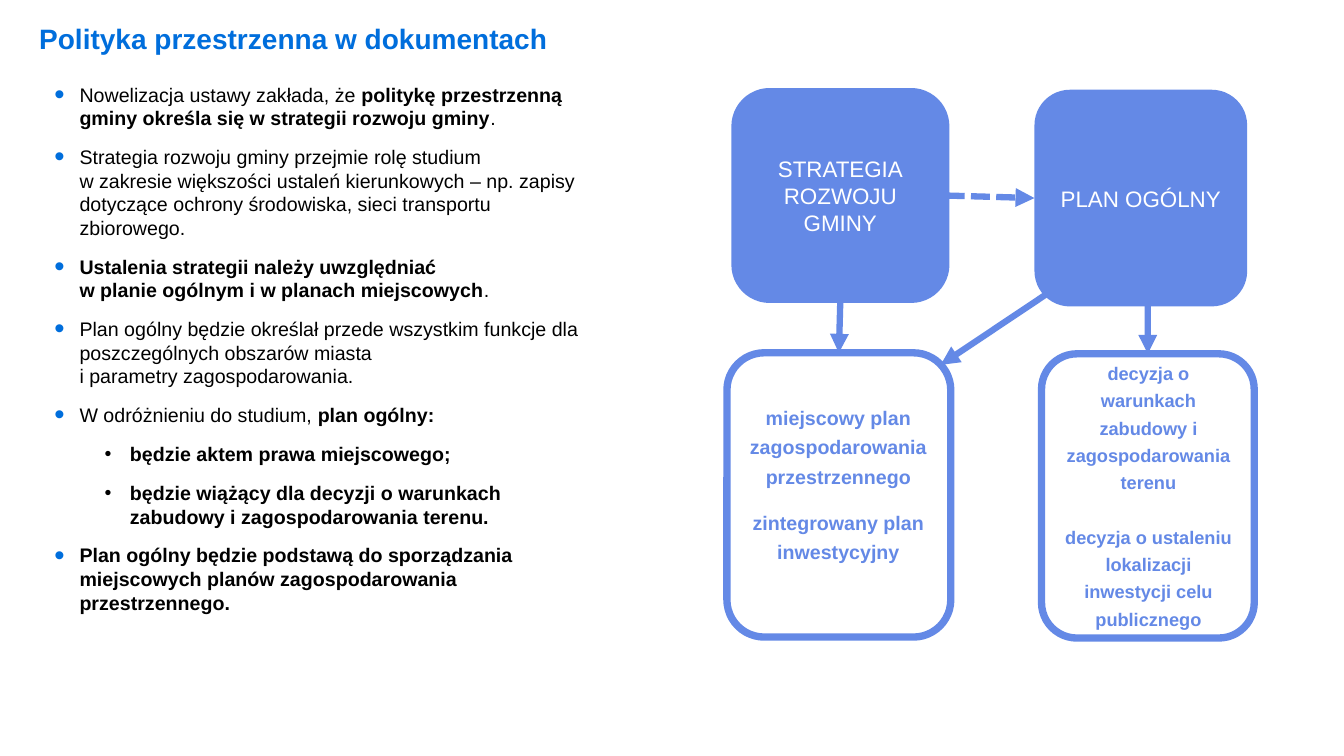
from typing import NamedTuple, Optional

from lxml.etree import SubElement
from pptx import Presentation
from pptx.dml.color import RGBColor
from pptx.enum.dml import MSO_LINE
from pptx.enum.shapes import MSO_CONNECTOR, MSO_SHAPE
from pptx.enum.text import MSO_ANCHOR, PP_ALIGN
from pptx.oxml.ns import qn
from pptx.util import Inches, Pt

BLUE, ACCENT, BLACK, WHITE = "006EDC", "6489E6", "000000", "FFFFFF"
TOP, LEFT, BOTTOM, RIGHT = range(4)


class Box(NamedTuple):
    name: str
    area: tuple
    text: str = ""
    solid: bool = False
    edge: bool = True


class Arrow(NamedTuple):
    start: tuple
    end: tuple
    source: Optional[tuple] = None
    target: Optional[tuple] = None
    dotted: bool = False


class Item(NamedTuple):
    text: str  # asterisks switch bold on and off
    level: int = 0


ITEMS = [
    Item("Nowelizacja ustawy zakłada, że *politykę przestrzenną gminy określa się "
         "w strategii rozwoju gminy*."),
    Item("Strategia rozwoju gminy przejmie rolę studium\nw zakresie większości ustaleń "
         "kierunkowych – np. zapisy dotyczące ochrony środowiska, sieci transportu zbiorowego."),
    Item("*Ustalenia strategii należy uwzględniać\nw planie ogólnym i w planach miejscowych*."),
    Item("Plan ogólny będzie określał przede wszystkim funkcje dla poszczególnych "
         "obszarów miasta\ni parametry zagospodarowania."),
    Item("W odróżnieniu do studium, *plan ogólny:*"),
    Item("*będzie aktem prawa miejscowego;*", 1),
    Item("*będzie wiążący dla decyzji o warunkach zabudowy i zagospodarowania terenu.*", 1),
    Item("*Plan ogólny będzie podstawą do sporządzania miejscowych planów "
         "zagospodarowania przestrzennego.*"),
]

BOXES = [
    Box("strategy", (7.29, 0.91, 2.09, 2.06), "STRATEGIA\nROZWOJU\nGMINY", solid=True),
    Box("plan", (10.26, 0.89, 2.11, 2.15), "PLAN OGÓLNY", solid=True, edge=False),
    Box("local", (7.21, 3.5, 2.22, 2.82)),
    Box("decision", (10.33, 3.51, 2.11, 2.82)),
]

ARROWS = [
    Arrow((9.38, 1.94), (10.26, 1.97), ("strategy", RIGHT), ("plan", LEFT), dotted=True),
    Arrow((10.84, 2.61), (9.33, 3.62)),
    Arrow((11.38, 2.42), (11.38, 3.51), target=("decision", TOP)),
    Arrow((8.33, 2.97), (8.32, 3.5), ("strategy", BOTTOM), ("local", TOP)),
]


def color(code: str) -> RGBColor:
    return RGBColor.from_string(code)


def write(para, text: str, size: float, code: str) -> None:
    """Fill a paragraph, with bold parts between asterisks."""
    for part, chunk in enumerate(text.split("*")):
        for row, piece in enumerate(chunk.split("\n")):
            if row:
                para.add_line_break()
            if piece:
                run = para.add_run()
                run.text = piece
                run.font.name, run.font.size = "Arial", Pt(size)
                run.font.bold = part % 2 == 1
                run.font.color.rgb = color(code)
    for gap in para._p.findall(qn("a:br")):
        SubElement(gap, qn("a:rPr"), sz=str(size * 100))


def add_frame(slide, area: tuple):
    frame = slide.shapes.add_textbox(*map(Inches, area)).text_frame
    frame.word_wrap = True
    return frame


def add_bullet(para, level: int) -> None:
    para.level = level
    para.space_before, para.space_after = Pt(8), Pt(3)
    props = para._p.get_or_add_pPr()
    props.set("marL", str(Inches(0.25 + 0.5 * level)))
    props.set("indent", str(Inches(-0.25)))
    if level == 0:
        SubElement(SubElement(props, qn("a:buClr")), qn("a:srgbClr"), val=BLUE)
        SubElement(props, qn("a:buSzPct"), val="150000")
    SubElement(props, qn("a:buFont"), typeface="Arial")
    SubElement(props, qn("a:buChar"), char="•")


def add_list(slide, items: list) -> None:
    frame = add_frame(slide, (0.44, 0.77, 5.49, 6.45))
    for index, item in enumerate(items):
        para = frame.add_paragraph() if index else frame.paragraphs[0]
        add_bullet(para, item.level)
        write(para, item.text, 14, BLACK)


def add_label(slide, area: tuple, texts: list, size: int, gap: float, top: float) -> None:
    """Centred bold paragraphs with a gap between them."""
    frame = add_frame(slide, area)
    frame.margin_top = Inches(top)
    for index, text in enumerate(texts):
        para = frame.add_paragraph() if index else frame.paragraphs[0]
        para.alignment, para.line_spacing = PP_ALIGN.CENTER, 1.25
        if index:
            para.space_before = Pt(gap)
        write(para, f"*{text}*", size, ACCENT)


def add_box(slide, box: Box):
    shape = slide.shapes.add_shape(MSO_SHAPE.ROUNDED_RECTANGLE, *map(Inches, box.area))
    shape.shadow.inherit = False
    if box.solid:
        shape.fill.solid()
        shape.fill.fore_color.rgb = color(ACCENT)
    else:
        shape.fill.background()
    if box.edge:
        shape.line.color.rgb, shape.line.width = color(ACCENT), Pt(5.25)
    else:
        shape.line.fill.background()
    if box.text:
        frame = shape.text_frame
        frame.word_wrap, frame.vertical_anchor = True, MSO_ANCHOR.MIDDLE
        frame.paragraphs[0].alignment = PP_ALIGN.CENTER
        write(frame.paragraphs[0], box.text, 16, WHITE)
    return shape


def add_arrow(slide, arrow: Arrow, shapes: dict) -> None:
    line = slide.shapes.add_connector(
        MSO_CONNECTOR.STRAIGHT, *map(Inches, arrow.start + arrow.end))
    if arrow.source:
        name, side = arrow.source
        line.begin_connect(shapes[name], side)
    if arrow.target:
        name, side = arrow.target
        line.end_connect(shapes[name], side)
    line.line.color.rgb, line.line.width = color(ACCENT), Pt(4.5)
    if arrow.dotted:
        line.line.dash_style = MSO_LINE.SQUARE_DOT
    SubElement(line.line._get_or_add_ln(), qn("a:tailEnd"), type="triangle")
    SubElement(line._element.spPr, qn("a:effectLst"))


def main() -> None:
    deck = Presentation()
    deck.slide_width, deck.slide_height = Inches(13.33), Inches(7.5)
    slide = deck.slides.add_slide(deck.slide_layouts[6])

    # Title and bullet list
    title = add_frame(slide, (0.29, 0.13, 5.55, 0.54))
    title.vertical_anchor = MSO_ANCHOR.MIDDLE
    title.paragraphs[0].line_spacing = 0.9
    write(title.paragraphs[0], "*Polityka przestrzenna w dokumentach*", 20, BLUE)
    add_list(slide, ITEMS)

    # Document diagram
    shapes = {box.name: add_box(slide, box) for box in BOXES}
    for arrow in ARROWS:
        add_arrow(slide, arrow, shapes)

    # Labels of the lower boxes
    add_label(slide, (7.02, 3.92, 2.59, 1.98),
              ["miejscowy plan zagospodarowania przestrzennego",
               "zintegrowany plan inwestycyjny"], 14, 12, 0.05)
    add_label(slide, (10.42, 3.29, 1.94, 3.03),
              ["decyzja o warunkach zabudowy i zagospodarowania terenu",
               "decyzja o ustaleniu lokalizacji inwestycji celu publicznego"], 13, 19.5, 0.25)

    deck.save("out.pptx")


if __name__ == "__main__":
    main()
